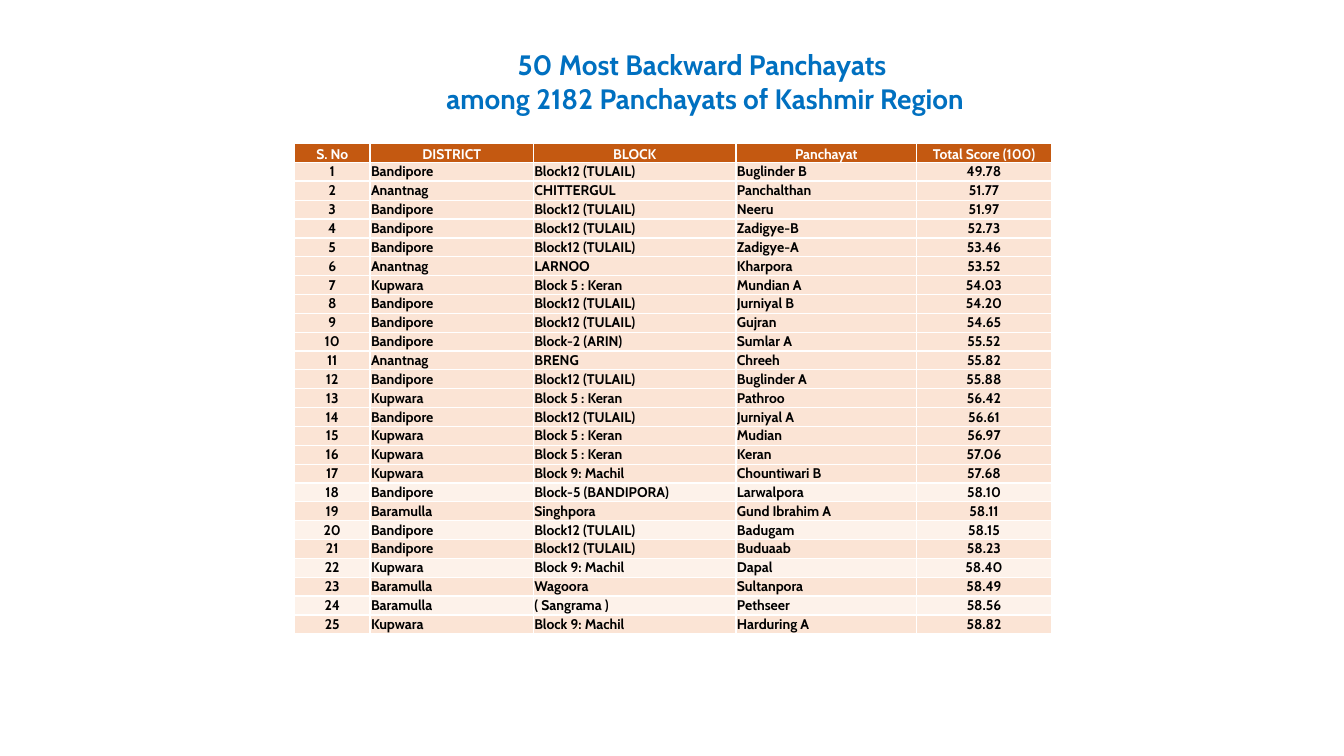
from lxml import etree
from pptx import Presentation
from pptx import util as u
from pptx.dml.color import RGBColor
from pptx.enum import text
from pptx.oxml import ns

CENTER, LEFT = text.PP_ALIGN.CENTER, text.PP_ALIGN.LEFT
WHITE, BLACK, BLUE = "FFFFFF", "000000", "0070C0"
ORANGE, PEACH, CREAM = "C45911", "FBE4D5", "FDF2EA"

HEADINGS = ["S. No", "DISTRICT", "BLOCK", "Panchayat", "Total Score (100)"]
WIDTHS = [0.75, 1.62, 2.01, 1.79, 1.34]
ALIGNMENTS = [CENTER, LEFT, LEFT, LEFT, CENTER]
ROW_HEIGHT = 0.178
CREAM_RANKS = range(18, 25, 2)
PANCHAYATS = [
    ("Bandipore", "Block12 (TULAIL)", "Buglinder B", "49.78"),
    ("Anantnag", "CHITTERGUL", "Panchalthan", "51.77"),
    ("Bandipore", "Block12 (TULAIL)", "Neeru", "51.97"),
    ("Bandipore", "Block12 (TULAIL)", "Zadigye-B", "52.73"),
    ("Bandipore", "Block12 (TULAIL)", "Zadigye-A", "53.46"),
    ("Anantnag", "LARNOO", "Kharpora", "53.52"),
    ("Kupwara", "Block 5 : Keran", "Mundian A", "54.03"),
    ("Bandipore", "Block12 (TULAIL)", "Jurniyal B", "54.20"),
    ("Bandipore", "Block12 (TULAIL)", "Gujran", "54.65"),
    ("Bandipore", "Block-2 (ARIN)", "Sumlar A", "55.52"),
    ("Anantnag", "BRENG", "Chreeh", "55.82"),
    ("Bandipore", "Block12 (TULAIL)", "Buglinder A", "55.88"),
    ("Kupwara", "Block 5 : Keran", "Pathroo", "56.42"),
    ("Bandipore", "Block12 (TULAIL)", "Jurniyal A", "56.61"),
    ("Kupwara", "Block 5 : Keran", "Mudian", "56.97"),
    ("Kupwara", "Block 5 : Keran", "Keran", "57.06"),
    ("Kupwara", "Block 9: Machil", "Chountiwari B", "57.68"),
    ("Bandipore", "Block-5 (BANDIPORA)", "Larwalpora", "58.10"),
    ("Baramulla", "Singhpora", "Gund Ibrahim A", "58.11"),
    ("Bandipore", "Block12 (TULAIL)", "Badugam", "58.15"),
    ("Bandipore", "Block12 (TULAIL)", "Buduaab", "58.23"),
    ("Kupwara", "Block 9: Machil", "Dapal", "58.40"),
    ("Baramulla", "Wagoora", "Sultanpora", "58.49"),
    ("Baramulla", "( Sangrama )", "Pethseer", "58.56"),
    ("Kupwara", "Block 9: Machil", "Harduring A", "58.82"),
]


def color(value):
    return RGBColor.from_string(value)


def write(frame, content, size=10, ink=BLACK, align=CENTER, spacing=None):
    frame.text = content
    for para in frame.paragraphs:
        para.alignment = align
        para.line_spacing = spacing
        for span in para.runs:
            span.font.name = "Cabin"
            span.font.size = u.Pt(size)
            span.font.bold = True
            span.font.color.rgb = color(ink)


deck = Presentation()
deck.slide_width, deck.slide_height = u.Inches(13.33), u.Inches(7.5)
page = deck.slides.add_slide(deck.slide_layouts[6])

title = page.shapes.add_textbox(u.Inches(2.38), u.Inches(0.42), u.Inches(9.23), u.Inches(0.77))
frame = title.text_frame
frame.word_wrap = True
frame.auto_size = text.MSO_AUTO_SIZE.SHAPE_TO_FIT_TEXT
frame.vertical_anchor = text.MSO_ANCHOR.MIDDLE
frame.margin_left = frame.margin_right = u.Inches(0.05)
frame.margin_top = frame.margin_bottom = u.Inches(0.05)
write(frame, "50 Most Backward Panchayats \namong 2182 Panchayats of Kashmir Region", size=20, ink=BLUE)

rows = [HEADINGS] + [(str(rank), *entry) for rank, entry in enumerate(PANCHAYATS, 1)]
table = page.shapes.add_table(
    len(rows), len(HEADINGS), u.Inches(2.92), u.Inches(1.42),
    u.Inches(sum(WIDTHS)), u.Inches(ROW_HEIGHT * len(rows))).table
table.horz_banding = False
for column, width in zip(table.columns, WIDTHS):
    column.width = u.Inches(width)

for rank, values in enumerate(rows):
    table.rows[rank].height = u.Inches(ROW_HEIGHT)
    header = rank == 0
    edges = ["lnT", "lnB"] if header else ["lnT"] if rank == 1 else []
    for index, value in enumerate(values):
        cell = table.cell(rank, index)
        margin = u.Inches(0 if header else 0.01)
        cell.margin_left = cell.margin_right = margin
        cell.margin_top = cell.margin_bottom = margin
        properties = cell._tc.get_or_add_tcPr()
        for edge in edges:
            line = etree.SubElement(properties, ns.qn(f"a:{edge}"), w=str(u.Pt(1.5)))
            fill = etree.SubElement(line, ns.qn("a:solidFill"))
            etree.SubElement(fill, ns.qn("a:srgbClr"), val=WHITE)
        cell.fill.solid()
        if header:
            cell.fill.fore_color.rgb = color(ORANGE)
            write(cell.text_frame, value, ink=WHITE, spacing=1.15)
        else:
            cell.vertical_anchor = text.MSO_ANCHOR.MIDDLE
            cell.fill.fore_color.rgb = color(CREAM if rank in CREAM_RANKS else PEACH)
            write(cell.text_frame, value, align=ALIGNMENTS[index])

deck.save("out.pptx")
